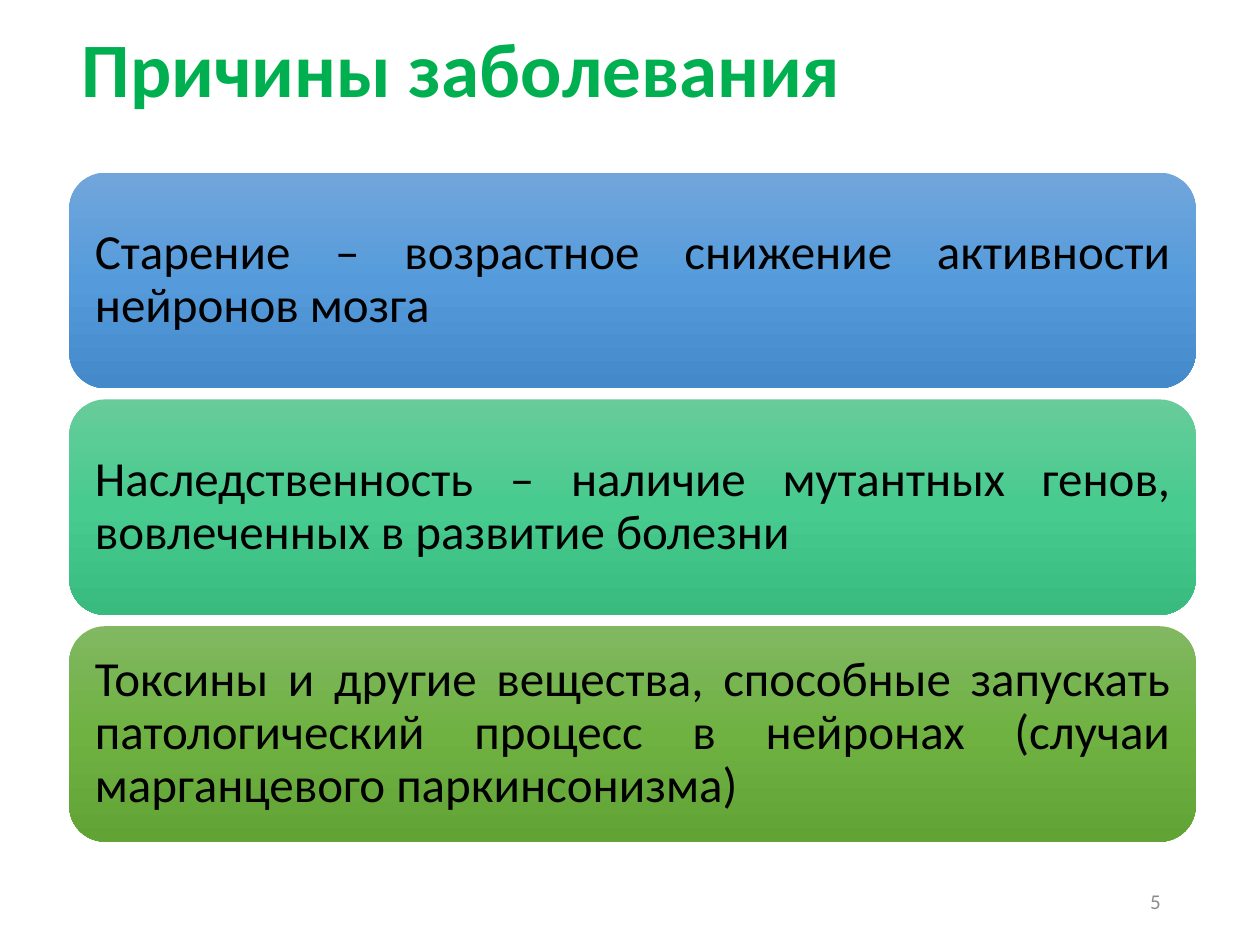
from copy import deepcopy

from pptx import Presentation, util as u
from pptx.dml.color import RGBColor
from pptx.enum import shapes, text
from pptx.oxml.ns import qn

COLORS = {
    "title": "00B050", "body": "000000", "number": "8C8C8C",
    "blue": ("71A6DB", "559BDB", "448ACA"),
    "teal": ("67CC9A", "47CB8E", "39BB7F"),
    "green": ("81B861", "6FB242", "62A336"),
}
CAUSES = [
    ("blue", "Старение – возрастное снижение активности нейронов мозга"),
    ("teal", "Наследственность – наличие мутантных генов, вовлеченных в развитие болезни"),
    ("green", "Токсины и другие вещества, способные запускать патологический процесс "
              "в нейронах (случаи марганцевого паркинсонизма)"),
]
LEFT, TOP, WIDTH, HEIGHT, PITCH = 0.55, 1.37, 8.94, 1.71, 1.8


class CausesSlide:
    """Style and current slide, with one method per kind of element."""

    def __init__(self, deck):
        self.font = "Calibri"
        self.slide = deck.slides.add_slide(deck.slide_layouts[5])

    def set_words(self, holder, words, color, size, align, spacing=1.0, inset=None, bold=False):
        frame = holder.text_frame
        frame.text = words
        frame.word_wrap = True
        frame.vertical_anchor = text.MSO_ANCHOR.MIDDLE
        if inset is not None:
            for side in ("left", "right", "top", "bottom"):
                setattr(frame, f"margin_{side}", u.Inches(inset))
        line = frame.paragraphs[0]
        line.alignment, line.line_spacing = align, spacing
        for key, value in {"name": self.font, "size": u.Pt(size), "bold": bold}.items():
            setattr(line.runs[0].font, key, value)
        line.runs[0].font.color.rgb = RGBColor.from_string(COLORS[color])

    def title(self, words, *box):
        heading = self.slide.shapes.title
        for key, value in zip(("left", "top", "width", "height"), box):
            setattr(heading, key, u.Inches(value))
        self.set_words(heading, words, "title", 44, text.PP_ALIGN.LEFT, 0.9, bold=True)

    def card(self, words, shades, *box):
        card = self.slide.shapes.add_shape(
            shapes.MSO_SHAPE.ROUNDED_RECTANGLE, *map(u.Inches, box))
        card.shadow.inherit = False
        card.line.fill.background()
        card.fill.gradient()
        card.fill.gradient_angle = 270
        stop_list = card._element.spPr.find(qn("a:gradFill")).find(qn("a:gsLst"))
        stop_list.append(deepcopy(stop_list[0]))
        for stop, position, shade in zip(card.fill.gradient_stops, (0, 0.5, 1), COLORS[shades]):
            stop.position = position
            stop.color.rgb = RGBColor.from_string(shade)
        self.set_words(card, words, "body", 28, text.PP_ALIGN.JUSTIFY, 0.9, inset=0.12)

    def number(self, words, *box):
        label = self.slide.shapes.add_textbox(*map(u.Inches, box))
        self.set_words(label, words, "number", 12, text.PP_ALIGN.RIGHT)


def main():
    deck = Presentation()
    deck.slide_width, deck.slide_height = u.Inches(10), u.Inches(7.5)
    page = CausesSlide(deck)
    page.title("Причины заболевания", LEFT, -0.15, 8.62, 1.45)
    for row, (shades, cause) in enumerate(CAUSES):
        page.card(cause, shades, LEFT, TOP + row * PITCH, WIDTH, HEIGHT)
    page.number("5", 7.06, 6.95, 2.25, 0.4)
    deck.save("out.pptx")


if __name__ == "__main__":
    main()
